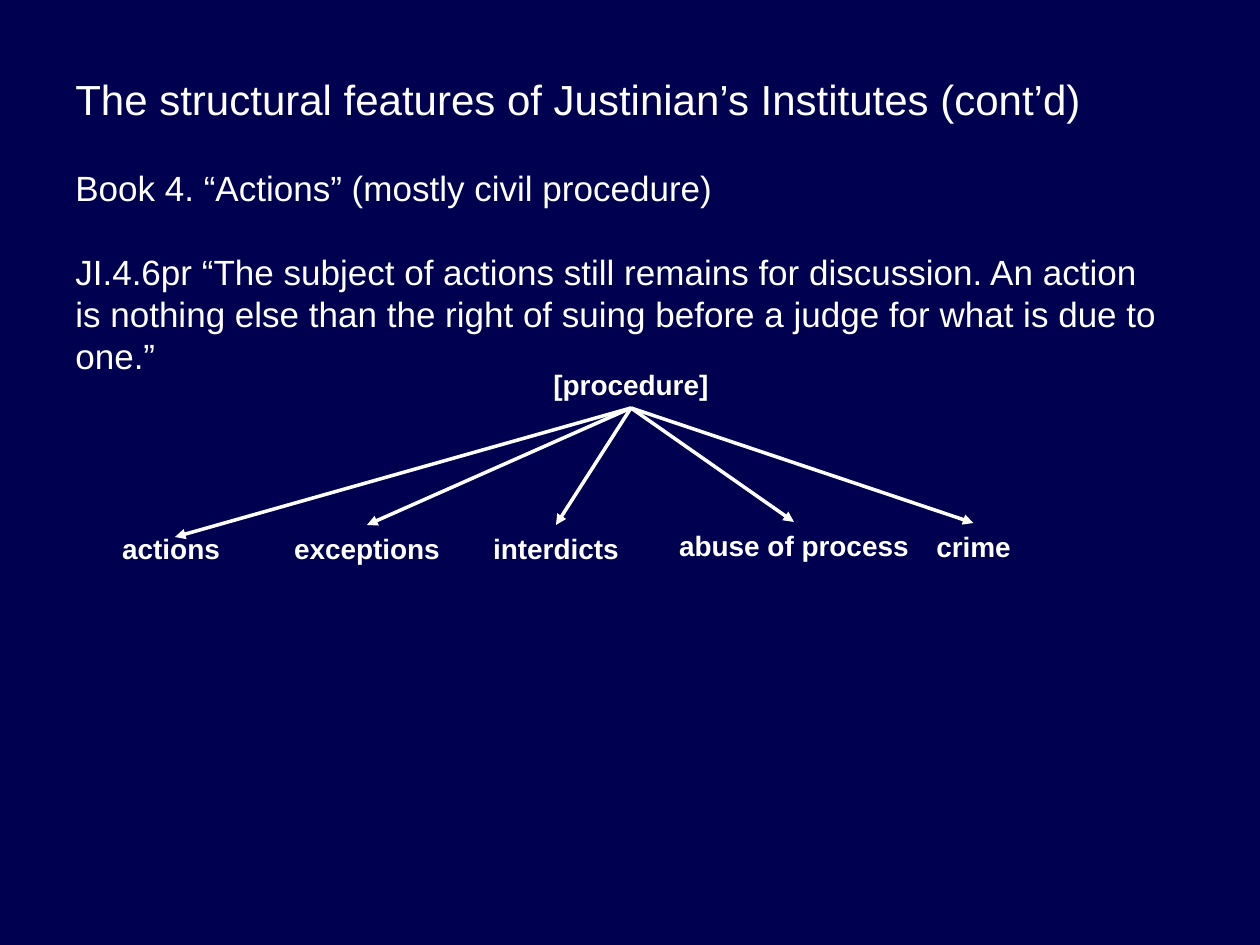
from dataclasses import dataclass

from lxml.etree import SubElement
from pptx import Presentation
from pptx.dml.color import RGBColor as RGB
from pptx.enum.shapes import MSO_CONNECTOR as CONN
from pptx.enum.text import PP_ALIGN as ALIGN
from pptx.oxml.ns import qn
from pptx.util import Emu, Pt


@dataclass(frozen=True)
class Theme:
    back: RGB = RGB(0x00, 0x00, 0x50)
    ink: RGB = RGB(0xFF, 0xFF, 0xFF)
    font: str = "Arial"
    title: int = 24
    body: int = 20
    label: int = 16
    leading: float = 1.2
    line: int = 2


theme = Theme()


def px(n):
    """Turn px, at 126 to the inch, into EMU."""
    return Emu(round(n * 914400 / 126))


def add_text(s, box, paragraphs, size, align=ALIGN.LEFT, bold=False):
    """Add a text box whose paragraphs stand one blank line apart."""
    sp = s.shapes.add_textbox(*map(px, box))
    tf = sp.text_frame
    tf.word_wrap = True
    for i, text in enumerate(paragraphs):
        p = tf.add_paragraph() if i else tf.paragraphs[0]
        p.text = text
        p.alignment = align
        p.line_spacing = Pt(size * theme.leading)
        p.space_before = Pt(size * theme.leading if i else 0)
        p.font.name = theme.font
        p.font.size = Pt(size)
        p.font.bold = bold
        p.font.color.rgb = theme.ink
    return sp


prs = Presentation()
prs.slide_width, prs.slide_height = px(1260), px(945)
s = prs.slides.add_slide(prs.slide_layouts[6])
s.background.fill.solid()
s.background.fill.fore_color.rgb = theme.back

add_text(s, (63, 67, 1197, 94),
         ["The structural features of Justinian’s Institutes (cont’d)"], theme.title)
add_text(s, (63, 160, 1111, 224), [
    "Book 4. “Actions” (mostly civil procedure)",
    "JI.4.6pr “The subject of actions still remains for discussion. An action "
    "is nothing else than the right of suing before a judge for what is due to one.”",
], theme.body)

LABEL_H = 47
root = add_text(s, (341, 361, 580, LABEL_H), ["[procedure]"], theme.label, ALIGN.CENTER, True)

# text, left, top, width, how far the arrow reaches below the label's top
branches = [
    ("actions ", 30, 525, 290, 12),
    ("exceptions", 222, 525, 290, 0),
    ("interdicts", 411, 525, 290, 0),
    ("abuse of process", 649, 522, 290, 0),
    ("crime", 921, 523, 105, 0),
]
for text, left, top, width, reach in branches:
    label = add_text(s, (left, top, width, LABEL_H), [text], theme.label, ALIGN.CENTER, True)
    arrow = s.shapes.add_connector(CONN.STRAIGHT, px(631), px(408),
                                   px(left + width / 2), px(top + reach))
    arrow.begin_connect(root, 2)
    if not reach:
        arrow.end_connect(label, 0)
    arrow.line.color.rgb = theme.ink
    arrow.line.width = Pt(theme.line)
    SubElement(arrow.line._get_or_add_ln(), qn("a:tailEnd"), type="triangle")
    SubElement(arrow._element.spPr, qn("a:effectLst"))

prs.save("out.pptx")
